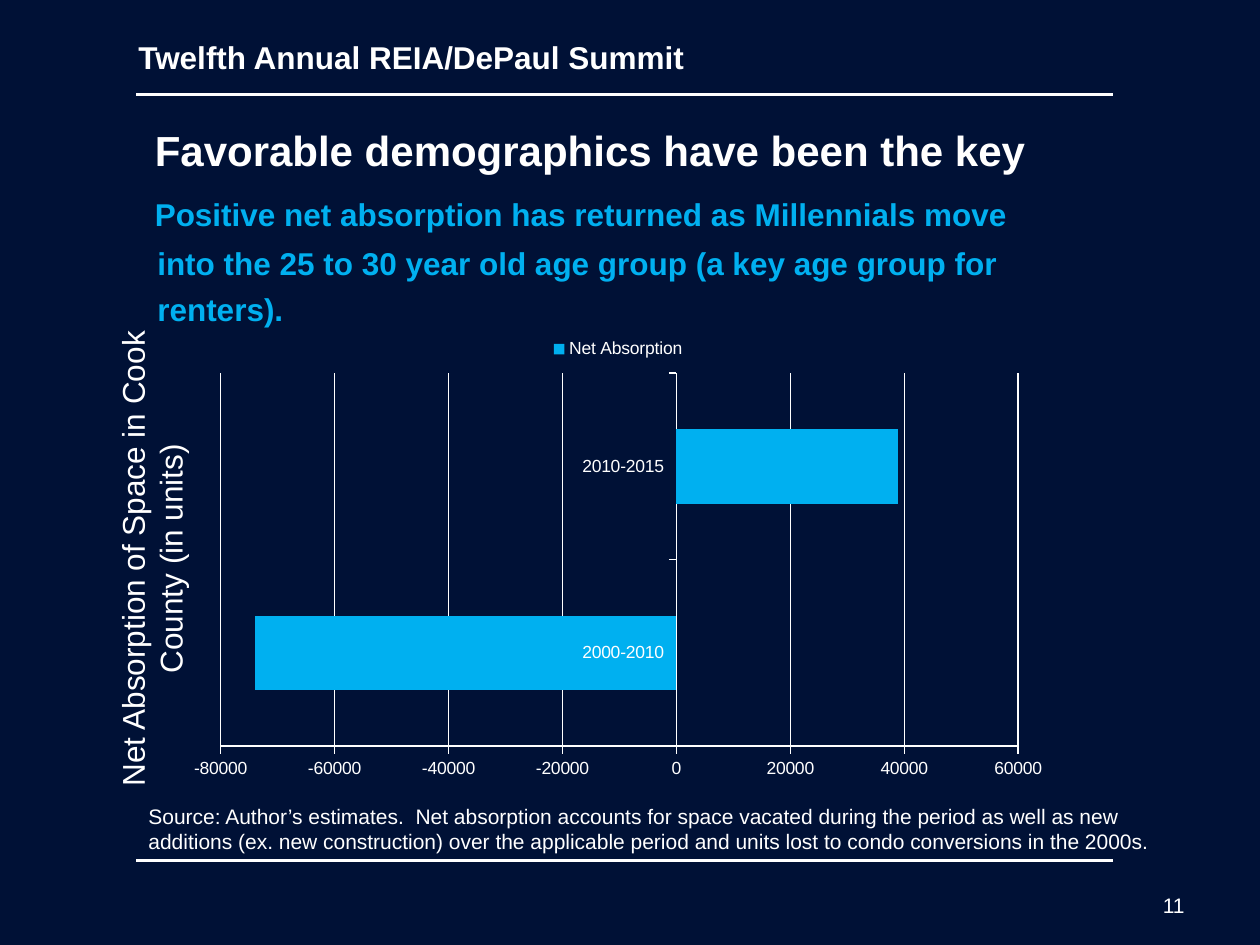
from dataclasses import dataclass

from lxml import etree
from pptx import Presentation
from pptx.chart.data import CategoryChartData
from pptx.dml.color import RGBColor
from pptx.enum import chart as charts, shapes, text
from pptx.oxml import ns
from pptx.util import Inches, Pt


@dataclass(frozen=True)
class Theme:
    font: str = "Arial"
    navy: RGBColor = RGBColor(0x00, 0x11, 0x36)
    white: RGBColor = RGBColor(0xFF, 0xFF, 0xFF)
    blue: RGBColor = RGBColor(0x00, 0xB0, 0xF0)
    title: int = 24
    body: int = 18
    note: int = 12
    chart: int = 10
    rule: float = 1.5


THEME = Theme()


@dataclass(frozen=True)
class Line:
    words: str
    size: int = THEME.body
    color: RGBColor = THEME.white
    bold: bool = False
    before: float = 0
    indent: float = 0


@dataclass(frozen=True)
class Block:
    left: float
    top: float
    width: float
    height: float
    lines: tuple[Line, ...]
    align: text.PP_ALIGN = text.PP_ALIGN.LEFT
    anchor: text.MSO_ANCHOR = text.MSO_ANCHOR.TOP
    rotation: float = 0
    inset_top: float = 0.05


HEADLINE = Block(0.67, 0.92, 7.75, 1.92, (
    Line("Favorable demographics have been the key", THEME.title, bold=True, indent=0.46),
    Line("Positive net absorption has returned as Millennials move",
         color=THEME.blue, bold=True, before=11.5, indent=0.46),
    Line("into the 25 to 30 year old age group (a key age group for",
         color=THEME.blue, bold=True, before=6, indent=0.48),
    Line("renters).", color=THEME.blue, bold=True, before=5, indent=0.48),
), inset_top=0.07)
PAGE_NUMBER = Block(7.17, 6.83, 2.33, 0.5, (Line("11", THEME.note),),
                    align=text.PP_ALIGN.RIGHT, anchor=text.MSO_ANCHOR.BOTTOM)
EVENT = Block(1, 0.25, 7.92, 0.4, (Line("Twelfth Annual REIA/DePaul Summit", bold=True),))
AXIS_LABEL = Block(-1.11, 4.08, 4.63, 0.71,
                   (Line("Net Absorption of Space in Cook County (in units)"),),
                   align=text.PP_ALIGN.CENTER, rotation=270)
SOURCE_NOTE = Block(1.08, 6.33, 8.17, 0.5, (Line(
    "Source: Author’s estimates.  Net absorption accounts for space vacated during the "
    "period as well as new additions (ex. new construction) over the applicable period "
    "and units lost to condo conversions in the 2000s.", THEME.note),))


def add_block(page, block: Block) -> None:
    box = page.shapes.add_textbox(Inches(block.left), Inches(block.top),
                                  Inches(block.width), Inches(block.height))
    box.rotation = block.rotation
    frame = box.text_frame
    frame.word_wrap = True
    frame.vertical_anchor = block.anchor
    frame.margin_top = Inches(block.inset_top)
    for index, line in enumerate(block.lines):
        para = frame.add_paragraph() if index else frame.paragraphs[0]
        para.alignment = block.align
        if index:
            para.space_before = Pt(line.before)
        if line.indent:
            para._p.get_or_add_pPr().set("marL", str(Inches(line.indent)))
        span = para.add_run()
        span.text = line.words
        span.font.name = THEME.font
        span.font.size = Pt(line.size)
        span.font.bold = line.bold
        span.font.color.rgb = line.color


def add_rule(page, top: float) -> None:
    rule = page.shapes.add_connector(shapes.MSO_CONNECTOR.STRAIGHT, Inches(1.08),
                                     Inches(top), Inches(8.83), Inches(top))
    rule.line.color.rgb = THEME.white
    rule.line.width = Pt(THEME.rule)
    etree.SubElement(rule._element.spPr, ns.qn("a:effectLst"))


def add_absorption_chart(page) -> None:
    data = CategoryChartData(number_format="0")
    data.categories = ["2000-2010", "2010-2015"]
    data.add_series("Net Absorption", [-74000, 39000])
    chart = page.shapes.add_chart(charts.XL_CHART_TYPE.BAR_CLUSTERED, Inches(1.4),
                                  Inches(2.58), Inches(7.01), Inches(3.67), data).chart
    chart.has_title = False
    chart.font.name = THEME.font
    chart.font.size = Pt(THEME.chart)
    chart.font.color.rgb = THEME.white

    # Legend and bars
    chart.has_legend = True
    chart.legend.position = charts.XL_LEGEND_POSITION.TOP
    chart.legend.include_in_layout = False
    plot = chart.plots[0]
    plot.gap_width = 150
    plot.vary_by_categories = False
    series = plot.series[0]
    series.invert_if_negative = False
    series.format.fill.solid()
    series.format.fill.fore_color.rgb = THEME.blue

    # Axes
    values = chart.value_axis
    values.minimum_scale, values.maximum_scale = -80000, 60000
    values.major_unit = 20000
    values.has_major_gridlines = True
    values.tick_labels.number_format = "0"
    values.tick_labels.number_format_is_linked = False
    for axis in (values, chart.category_axis):
        axis.major_tick_mark = charts.XL_TICK_MARK.OUTSIDE
    for part in (values, values.major_gridlines, chart.category_axis):
        part.format.line.color.rgb = THEME.white
        part.format.line.width = Pt(0.75)


def main() -> None:
    deck = Presentation()
    deck.slide_width, deck.slide_height = Inches(10), Inches(7.5)
    page = deck.slides.add_slide(deck.slide_layouts[6])
    page.background.fill.solid()
    page.background.fill.fore_color.rgb = THEME.navy

    # Heading and frame
    add_block(page, HEADLINE)
    for top in (0.75, 6.83):
        add_rule(page, top)
    for block in (PAGE_NUMBER, EVENT, AXIS_LABEL):
        add_block(page, block)

    # Chart and its source
    add_absorption_chart(page)
    add_block(page, SOURCE_NOTE)
    deck.save("out.pptx")


if __name__ == "__main__":
    main()
